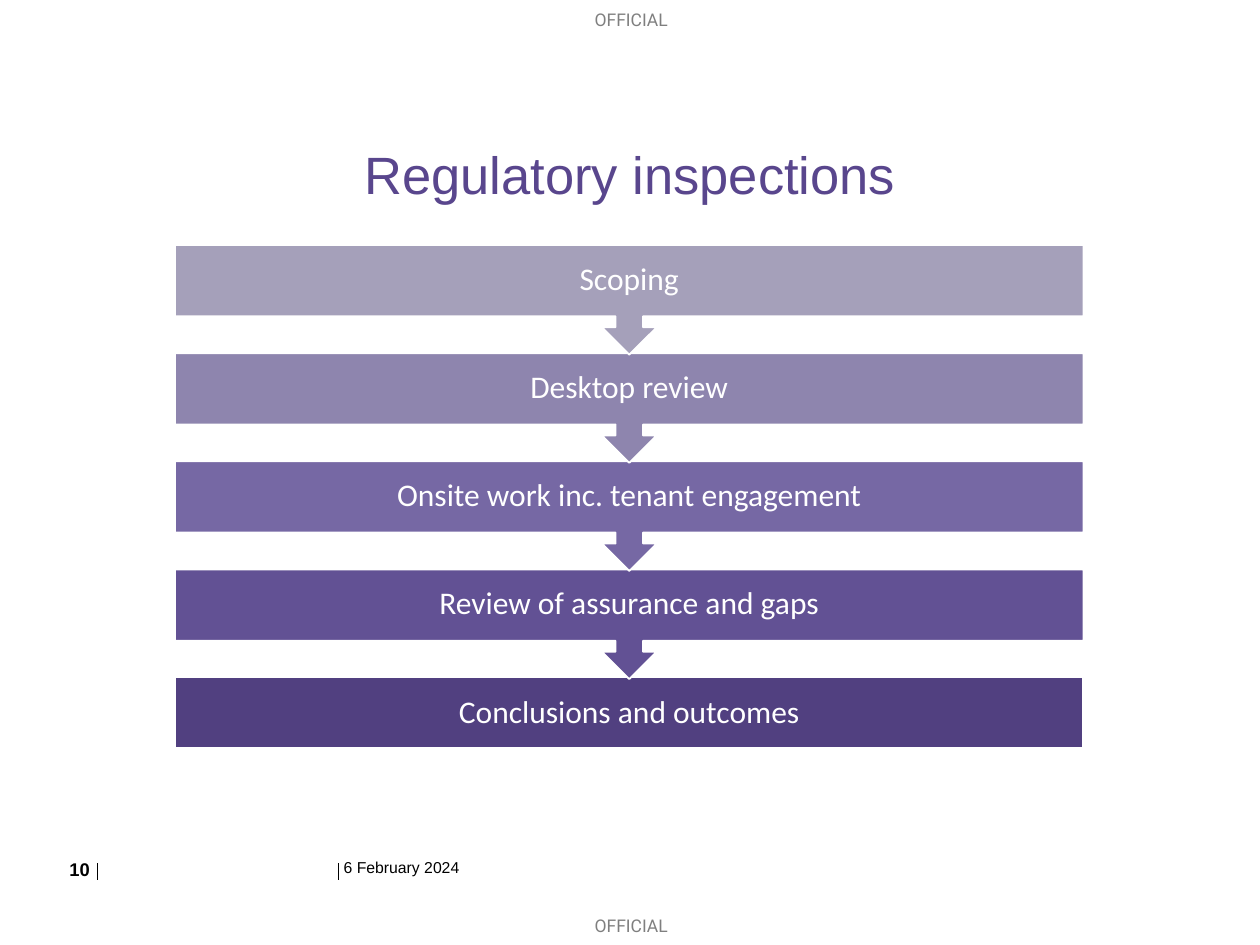
from dataclasses import dataclass

from lxml import etree
from pptx import Presentation
from pptx import util as u
from pptx.dml.color import RGBColor
from pptx.enum import shapes, text
from pptx.oxml import ns


@dataclass(frozen=True)
class Theme:
    """Colours, fonts and type sizes of the slide."""
    black: str = "000000"
    white: str = "FFFFFF"
    title: str = "59468D"
    steps: tuple = ("A5A0BA", "8E85AE", "7668A4", "625194", "514080")
    font: str = "Arial"
    step_font: str = "Calibri"
    marking_font: str = "Roboto"
    title_size: float = 30
    step_size: float = 18
    number_size: float = 10.5
    marking_size: float = 10
    date_size: float = 9


THEME = Theme()
STEPS = ("Scoping", "Desktop review", "Onsite work inc. tenant engagement",
         "Review of assurance and gaps", "Conclusions and outcomes")
STEP_LEFT, STEP_TOP, STEP_WIDTH = 3.53, 4.94, 18.31
STEP_PITCH, BAR_HEIGHT, CALLOUT_HEIGHT = 2.18, 1.42, 2.21


def add_label(page, wording, area, font, size, color, centred=False,
              bold=False, spacing=None, inset=0, middle=False, wrap=True):
    """Add a one-line text box and return its run."""
    box = page.shapes.add_textbox(*map(u.Cm, area))
    frame = box.text_frame
    frame.word_wrap = wrap
    frame.margin_left = frame.margin_right = u.Cm(inset)
    frame.margin_top = frame.margin_bottom = u.Cm(inset)
    frame.vertical_anchor = text.MSO_ANCHOR.MIDDLE if middle else text.MSO_ANCHOR.TOP
    para = frame.paragraphs[0]
    para.alignment = text.PP_ALIGN.CENTER if centred else text.PP_ALIGN.LEFT
    if spacing:
        para.line_spacing = spacing
    span = para.add_run()
    span.text = wording
    span.font.name = font
    span.font.size = u.Pt(size)
    span.font.bold = bold
    span.font.color.rgb = RGBColor.from_string(color)
    return span


def add_marking(page, top):
    """Add a half-transparent security marking."""
    span = add_label(page, "OFFICIAL", (11.99, top, 1.52, 0.43),
                     THEME.marking_font, THEME.marking_size, THEME.black, wrap=False)
    color = span.font._element.find(".//" + ns.qn("a:srgbClr"))
    etree.SubElement(color, ns.qn("a:alpha")).set("val", "50000")


def add_divider(page, left):
    """Add a short vertical line in the footer."""
    line = page.shapes.add_connector(
        shapes.MSO_CONNECTOR.STRAIGHT, u.Cm(left), u.Cm(17.73), u.Cm(left), u.Cm(17.4))
    line.line.color.rgb = RGBColor.from_string(THEME.black)
    line.line.width = u.Pt(0.75)
    etree.SubElement(line._element.spPr, ns.qn("a:effectLst"))


def add_step(page, index):
    """Add a process step, with an arrow down unless it is the last."""
    last = index == len(STEPS) - 1
    top = STEP_TOP + index * STEP_PITCH
    kind = shapes.MSO_SHAPE.RECTANGLE if last else shapes.MSO_SHAPE.UP_ARROW_CALLOUT
    height = BAR_HEIGHT if last else CALLOUT_HEIGHT
    bar = page.shapes.add_shape(
        kind, *map(u.Cm, (STEP_LEFT, top, STEP_WIDTH, height)))
    bar.rotation = 0 if last else 180
    bar.shadow.inherit = False
    bar.fill.solid()
    bar.fill.fore_color.rgb = RGBColor.from_string(THEME.steps[index])
    bar.line.color.rgb = RGBColor.from_string(THEME.white)
    bar.line.width = u.Pt(1)
    add_label(page, STEPS[index], (STEP_LEFT, top, STEP_WIDTH, BAR_HEIGHT),
              THEME.step_font, THEME.step_size, THEME.white, centred=True,
              spacing=0.9, inset=0.36, middle=True)


def main():
    """Build the slide and save it."""
    deck = Presentation()
    deck.slide_width, deck.slide_height = u.Cm(25.4), u.Cm(19.05)
    page = deck.slides.add_slide(deck.slide_layouts[6])
    for left in (1.96, 6.83):
        add_divider(page, left)
    for top in (18.44, 0.18):
        add_marking(page, top)
    add_label(page, "Regulatory inspections", (4.24, 3, 16.92, 2.18), THEME.font,
              THEME.title_size, THEME.title, centred=True, spacing=0.9)
    for index in reversed(range(len(STEPS))):
        add_step(page, index)
    add_label(page, "6 February 2024", (6.93, 17.3, 5.97, 0.3), THEME.font,
              THEME.date_size, THEME.black)
    add_label(page, "10", (1.35, 17.3, 0.51, 0.3), THEME.font,
              THEME.number_size, THEME.black, centred=True, bold=True)
    deck.save("out.pptx")


if __name__ == "__main__":
    main()
